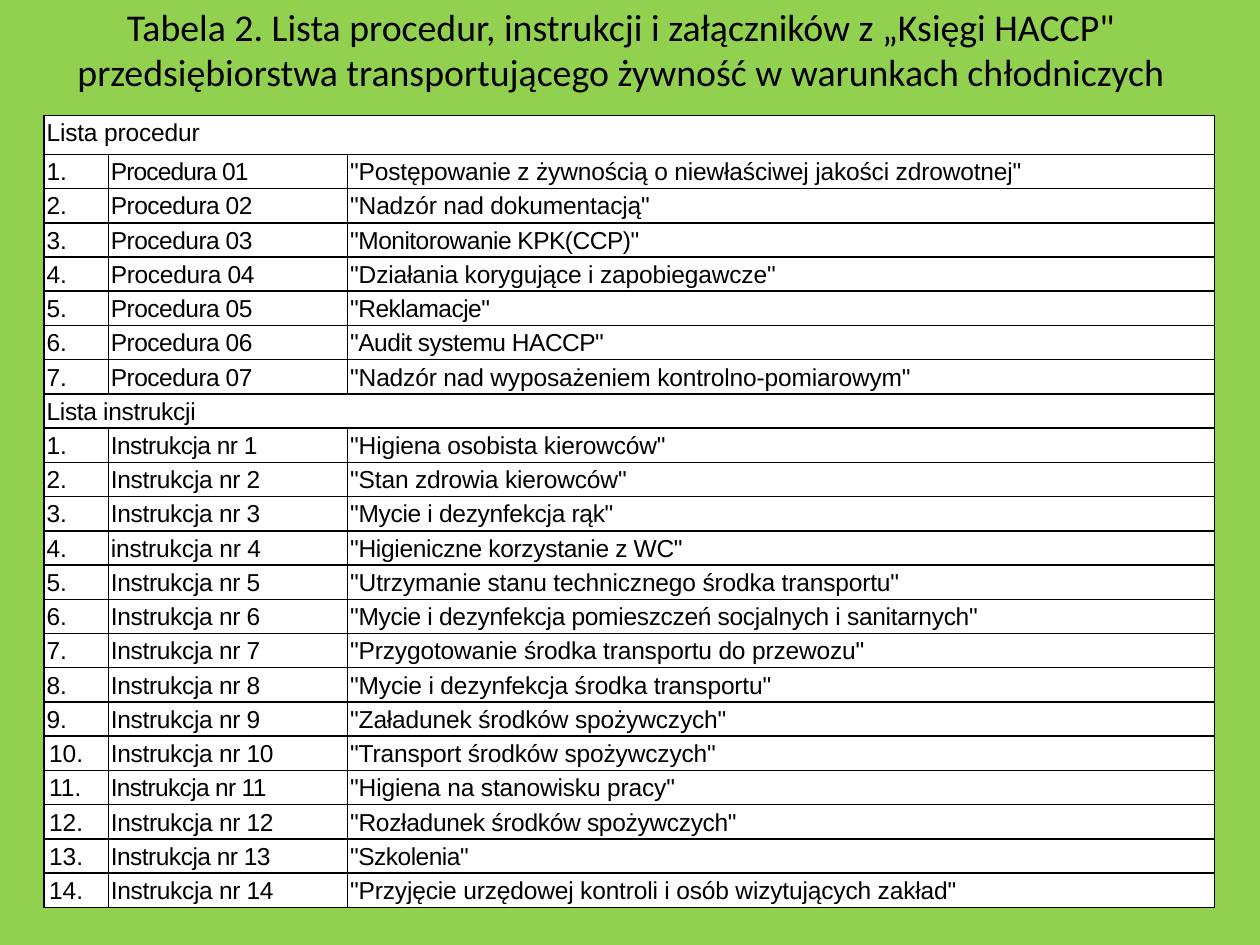
from lxml.etree import SubElement
from pptx import Presentation
from pptx.dml.color import RGBColor
from pptx.enum.text import MSO_ANCHOR, PP_ALIGN
from pptx.oxml.ns import qn
from pptx.util import Inches, Pt

WIDTH, HEIGHT = Inches(10), Inches(7.5)
TITLE = ('Tabela 2. Lista procedur, instrukcji i załączników z „Księgi HACCP" '
         'przedsiębiorstwa transportującego żywność w warunkach chłodniczych')
COLUMNS = (0.51, 1.9, 6.88)
HEADER_ROW, ROW = 0.31, 0.272
SECTIONS = (
    ("Lista procedur", -0.1, (
        ("Procedura 01", -0.5, '"Postępowanie z żywnością o niewłaściwej jakości zdrowotnej"', -0.1),
        ("Procedura 02", -0.3, '"Nadzór nad dokumentacją"', -0.1),
        ("Procedura 03", -0.3, '"Monitorowanie KPK(CCP)"', -0.3),
        ("Procedura 04", -0.2, '"Działania korygujące i zapobiegawcze"', -0.1),
        ("Procedura 05", -0.3, '"Reklamacje"', -0.3),
        ("Procedura 06", -0.3, '"Audit systemu HACCP"', -0.3),
        ("Procedura 07", -0.3, '"Nadzór nad wyposażeniem kontrolno-pomiarowym"', -0.1),
    )),
    ("Lista instrukcji", -0.2, (
        ("Instrukcja nr 1", -0.3, '"Higiena osobista kierowców"', -0.1),
        ("Instrukcja nr 2", -0.2, '"Stan zdrowia kierowców"', -0.1),
        ("Instrukcja nr 3", -0.2, '"Mycie i dezynfekcja rąk"', -0.2),
        ("instrukcja nr 4", -0.1, '"Higieniczne korzystanie z WC"', -0.2),
        ("Instrukcja nr 5", -0.2, '"Utrzymanie stanu technicznego środka transportu"', -0.1),
        ("Instrukcja nr 6", -0.2, '"Mycie i dezynfekcja pomieszczeń socjalnych i sanitarnych"', -0.2),
        ("Instrukcja nr 7", -0.2, '"Przygotowanie środka transportu do przewozu"', -0.1),
        ("Instrukcja nr 8", -0.2, '"Mycie i dezynfekcja środka transportu"', -0.1),
        ("Instrukcja nr 9", -0.2, '"Załadunek środków spożywczych"', -0.1),
        ("Instrukcja nr 10", -0.2, '"Transport środków spożywczych"', -0.1),
        ("Instrukcja nr 11", -0.4, '"Higiena na stanowisku pracy"', -0.1),
        ("Instrukcja nr 12", -0.2, '"Rozładunek środków spożywczych"', -0.2),
        ("Instrukcja nr 13", -0.3, '"Szkolenia"', -0.3),
        ("Instrukcja nr 14", -0.2, '"Przyjęcie urzędowej kontroli i osób wizytujących zakład"', -0.1),
    )),
)


def paint(fill, color):
    """Give a fill one solid colour from a hex string."""
    fill.solid()
    fill.fore_color.rgb = RGBColor.from_string(color)


def write(tf, text, font="Arial", size=14, color="000000", align=PP_ALIGN.LEFT,
          line=1.15, spacing=0, indent=0):
    """Write one formatted paragraph into a text frame."""
    p = tf.paragraphs[0]
    p.alignment, p.line_spacing = align, line
    if indent:
        p._p.get_or_add_pPr().set("marL", str(Inches(indent)))
    r = p.add_run()
    r.text = text
    r.font.name, r.font.size = font, Pt(size)
    paint(r.font.fill, color)
    if spacing:
        r._r.get_or_add_rPr().set("spc", str(round(spacing * 100)))


def add_title(s):
    """Add the centred title across the top of the slide."""
    box = s.shapes.add_textbox(round(WIDTH * 0.043), 0, round(WIDTH * 0.9), round(HEIGHT * 0.103))
    tf = box.text_frame
    tf.word_wrap, tf.vertical_anchor = True, MSO_ANCHOR.MIDDLE
    write(tf, TITLE, font="Calibri", size=21.6, align=PP_ALIGN.CENTER, line=1.0)


def style_cell(cell, fill="FFFFFF", border="000000"):
    """Set the margins, borders and fill of a cell."""
    cell.margin_left = cell.margin_right = Inches(0.02)
    cell.margin_top = cell.margin_bottom = 0
    tcPr = cell._tc.get_or_add_tcPr()
    for side in ("a:lnL", "a:lnR", "a:lnT", "a:lnB"):
        ln = SubElement(tcPr, qn(side), w=str(Pt(1)))
        SubElement(SubElement(ln, qn("a:solidFill")), qn("a:srgbClr"), val=border)
    paint(cell.fill, fill)


def fill_section(table, top, heading, spacing, entries):
    """Fill a merged heading row and its numbered entries; return the next row."""
    table.cell(top, 0).merge(table.cell(top, len(COLUMNS) - 1))
    write(table.cell(top, 0).text_frame, heading, spacing=spacing)
    for i, (name, name_spacing, subject, subject_spacing) in enumerate(entries, 1):
        number, label, detail = (c.text_frame for c in table.rows[top + i].cells)
        write(number, f"{i}.", indent=0.02 if i > 9 else 0)
        write(label, name, spacing=name_spacing)
        write(detail, subject, spacing=subject_spacing)
    return top + len(entries) + 1


def add_list_table(s):
    """Add the table of procedures and instructions."""
    count = sum(len(entries) + 1 for _, _, entries in SECTIONS)
    heights = [HEADER_ROW] + [ROW] * (count - 1)
    table = s.shapes.add_table(count, len(COLUMNS), round(WIDTH * 0.035), round(HEIGHT * 0.122),
                               Inches(sum(COLUMNS)), Inches(sum(heights))).table
    table.first_row = table.horz_banding = False
    for column, width in zip(table.columns, COLUMNS):
        column.width = Inches(width)
    for row, height in zip(table.rows, heights):
        row.height = Inches(height)
    for cell in table.iter_cells():
        style_cell(cell)
    top = 0
    for section in SECTIONS:
        top = fill_section(table, top, *section)


def main():
    """Build the slide and save it."""
    prs = Presentation()
    prs.slide_width, prs.slide_height = WIDTH, HEIGHT
    s = prs.slides.add_slide(prs.slide_layouts[6])
    paint(s.background.fill, "92D050")
    add_title(s)
    add_list_table(s)
    prs.save("out.pptx")


if __name__ == "__main__":
    main()
